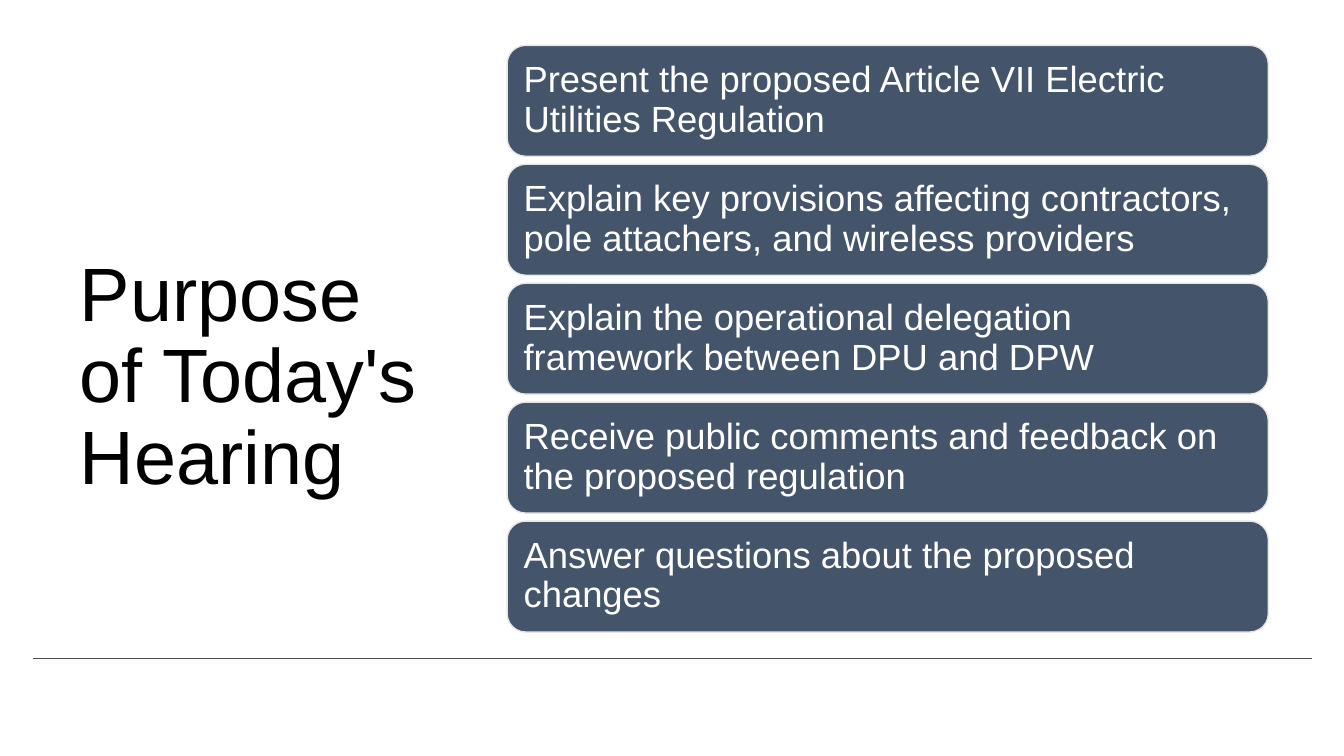
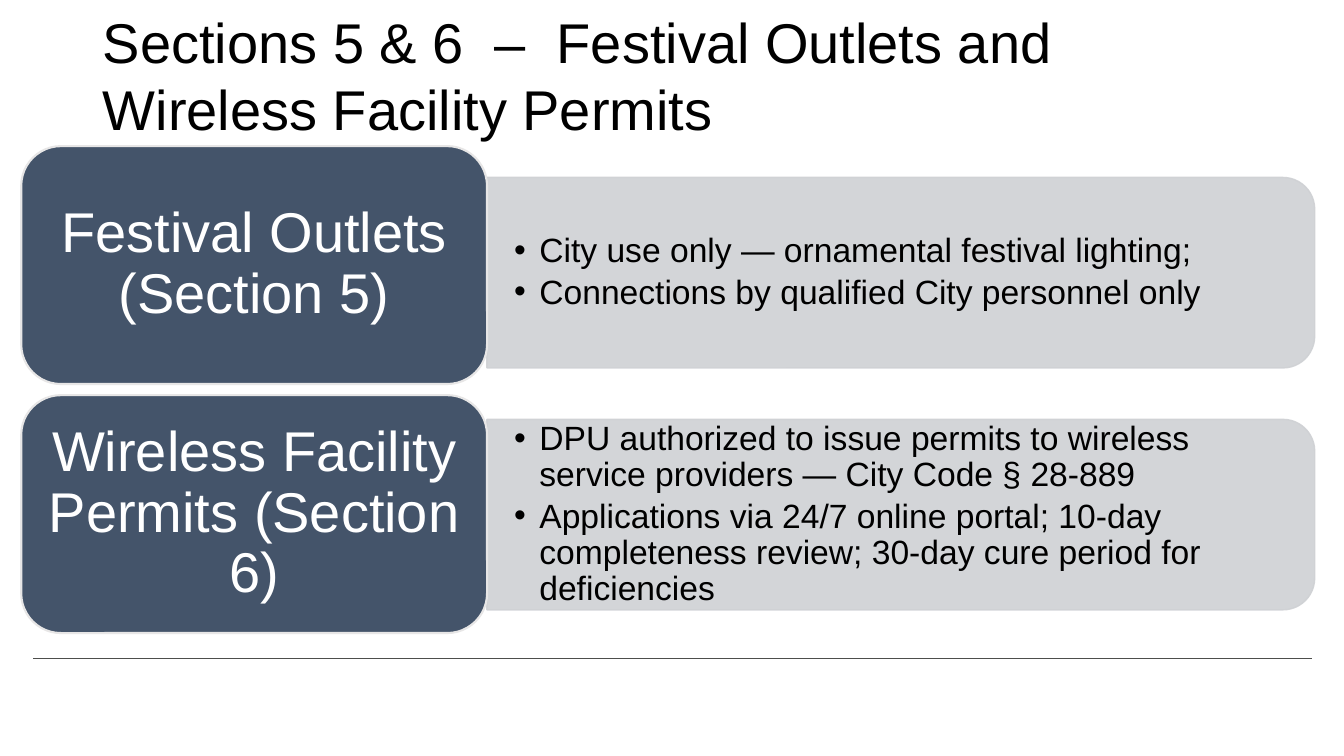
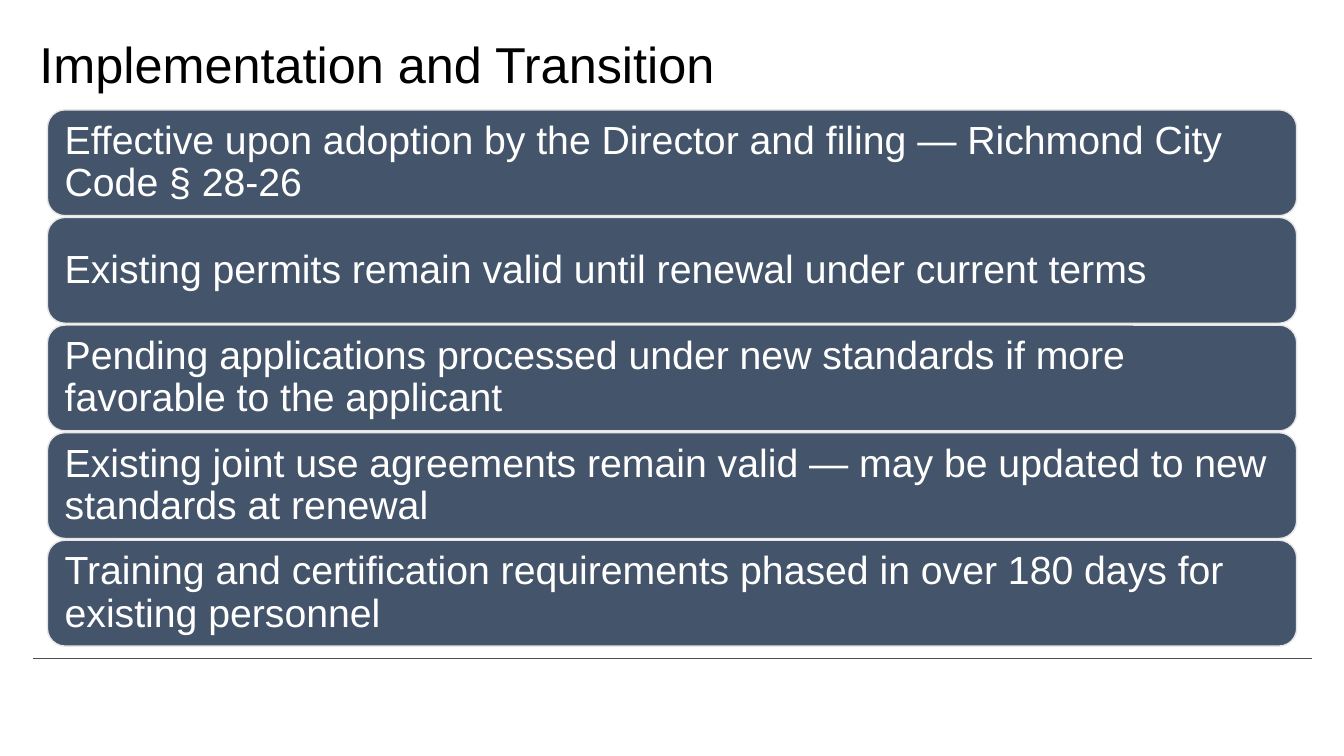
from dataclasses import dataclass

from lxml.etree import SubElement
from pptx import Presentation
from pptx.dml.color import RGBColor
from pptx.enum.shapes import MSO_CONNECTOR, MSO_SHAPE
from pptx.enum.text import MSO_ANCHOR, MSO_AUTO_SIZE, PP_ALIGN
from pptx.oxml.ns import qn
from pptx.util import Inches, Pt

SLIDE_WIDTH, SLIDE_HEIGHT = Inches(13.33), Inches(7.5)
TITLE_ONLY, TWO_CONTENT = 5, 3


@dataclass(frozen=True)
class Theme:
    font: str = "Arial"
    ink: str = "000000"
    white: str = "FFFFFF"
    navy: str = "44546A"
    edge: str = "E7E6E6"
    panel: str = "CFD1D4"
    rule: str = "4D4E4C"
    panel_opacity: int = 90
    list_size: int = 24
    topic_size: int = 40
    tight: float = 0.9


THEME = Theme()


@dataclass(frozen=True)
class Frame:
    """A rectangle in percent of the slide's width and height."""
    x: float
    y: float
    width: float
    height: float

    def emu(self) -> tuple[int, int, int, int]:
        return (across(self.x), down(self.y), across(self.width), down(self.height))


@dataclass(frozen=True)
class Heading:
    text: str
    frame: Frame
    size: int
    anchor: MSO_ANCHOR = MSO_ANCHOR.MIDDLE
    spacing: float = THEME.tight


@dataclass(frozen=True)
class BarSlide:
    heading: Heading
    stack: Frame
    bar_height: float
    size: int
    inset: float
    statements: tuple[str, ...]


@dataclass(frozen=True)
class Topic:
    label: str
    label_y: float
    panel_y: float
    points: tuple[str, ...]


PURPOSE = BarSlide(
    Heading("Purpose of Today's Hearing", Frame(5.18, 9.33, 28.06, 81.47), 54),
    Frame(37.73, 6, 56.64, 77.6), 14.67, 26, 0.11,
    ("Present the proposed Article VII Electric Utilities Regulation",
     "Explain key provisions affecting contractors, pole attachers, and wireless providers",
     "Explain the operational delegation framework between DPU and DPW",
     "Receive public comments and feedback on the proposed regulation",
     "Answer questions about the proposed changes"),
)

PERMITS_HEADING = Heading(
    "Sections 5 & 6  –  Festival Outlets and Wireless Facility Permits",
    Frame(6.9, 0.27, 86.27, 19.33), 40, MSO_ANCHOR.TOP, 1.0)
PERMITS = (
    Topic("Festival Outlets (Section 5)", 19.33, 23.47,
          ("City use only — ornamental festival lighting;",
           "Connections by qualified City personnel only")),
    Topic("Wireless Facility Permits (Section 6)", 52.27, 55.47,
          ("DPU authorized to issue permits to wireless service providers — City Code § 28-889",
           "Applications via 24/7 online portal; 10-day completeness review; "
           "30-day cure period for deficiencies")),
)

TRANSITION = BarSlide(
    Heading("Implementation and Transition", Frame(2.18, 0, 73.89, 17.87), 36),
    Frame(3.53, 14.53, 92.95, 70.93), 14, 28, 0.12,
    ("Effective upon adoption by the Director and filing — Richmond City Code § 28-26",
     "Existing permits remain valid until renewal under current terms",
     "Pending applications processed under new standards if more favorable to the applicant",
     "Existing joint use agreements remain valid — may be updated to new standards at renewal",
     "Training and certification requirements phased in over 180 days for existing personnel"),
)


def across(percent: float) -> int:
    return round(SLIDE_WIDTH * percent / 100)


def down(percent: float) -> int:
    return round(SLIDE_HEIGHT * percent / 100)


def colour(code: str) -> RGBColor:
    return RGBColor.from_string(code)


def place(shape, frame: Frame) -> None:
    shape.left, shape.top, shape.width, shape.height = frame.emu()


def set_text_area(text_frame, anchor: MSO_ANCHOR, side: float, ends: float) -> None:
    text_frame.word_wrap = True
    text_frame.auto_size = MSO_AUTO_SIZE.NONE
    text_frame.vertical_anchor = anchor
    text_frame.margin_left = text_frame.margin_right = Inches(side)
    text_frame.margin_top = text_frame.margin_bottom = Inches(ends)


def write(paragraph, text: str, size: int, ink: str,
          align: PP_ALIGN = PP_ALIGN.LEFT, spacing: float = THEME.tight) -> None:
    paragraph.alignment = align
    paragraph.line_spacing = spacing
    run = paragraph.add_run()
    run.text = text
    run.font.name = THEME.font
    run.font.size = Pt(size)
    run.font.color.rgb = colour(ink)


def paint(shape, fill: str, line: str, line_width: float) -> None:
    shape.shadow.inherit = False
    shape.fill.solid()
    shape.fill.fore_color.rgb = colour(fill)
    shape.line.color.rgb = colour(line)
    shape.line.width = Pt(line_width)


def add_master_rule(deck, slide) -> None:
    """Draw the footer rule and hand it to the master."""
    y = down(87.07)
    rule = slide.shapes.add_connector(
        MSO_CONNECTOR.STRAIGHT, across(2.48), y, across(97.6), y)
    rule.line.color.rgb = colour(THEME.rule)
    rule.line.width = Pt(0.5)
    SubElement(rule.element.spPr, qn("a:effectLst"))
    rule.element.nvCxnSpPr.cNvPr.set("id", "90")
    deck.slide_master.element.cSld.spTree.append(rule.element)


def add_slide(deck, layout: int, heading: Heading):
    slide = deck.slides.add_slide(deck.slide_layouts[layout])
    title = slide.shapes.title
    place(title, heading.frame)
    set_text_area(title.text_frame, heading.anchor, 0.1, 0.05)
    write(title.text_frame.paragraphs[0], heading.text, heading.size, THEME.ink,
          spacing=heading.spacing)
    return slide


def add_label_box(slide, frame: Frame, text: str, size: int, line_width: float,
                  side: float, ends: float, align: PP_ALIGN = PP_ALIGN.LEFT) -> None:
    box = slide.shapes.add_shape(MSO_SHAPE.ROUNDED_RECTANGLE, *frame.emu())
    paint(box, THEME.navy, THEME.edge, line_width)
    set_text_area(box.text_frame, MSO_ANCHOR.MIDDLE, side, ends)
    write(box.text_frame.paragraphs[0], text, size, THEME.white, align)


def add_bar_slide(deck, content: BarSlide):
    slide = add_slide(deck, TITLE_ONLY, content.heading)
    stack = content.stack
    pitch = (stack.height - content.bar_height) / (len(content.statements) - 1)
    for row, statement in enumerate(content.statements):
        frame = Frame(stack.x, stack.y + row * pitch, stack.width, content.bar_height)
        add_label_box(slide, frame, statement, content.size, 1,
                      content.inset, content.inset)
    return slide


def add_panel(slide, frame: Frame) -> None:
    """Turn a shape with two round top corners so that they face right."""
    left, top, width, height = frame.emu()
    shift = (width - height) // 2
    panel = slide.shapes.add_shape(MSO_SHAPE.ROUND_2_SAME_RECTANGLE,
                                   left + shift, top - shift, height, width)
    panel.rotation = 90
    paint(panel, THEME.panel, THEME.panel, 1)
    for tint in panel.element.spPr.iter(qn("a:srgbClr")):
        SubElement(tint, qn("a:alpha"), val=str(THEME.panel_opacity * 1000))


def fill_list(body, frame: Frame, points: tuple[str, ...]) -> None:
    place(body, frame)
    set_text_area(body.text_frame, MSO_ANCHOR.MIDDLE, 0.27, 0.02)
    for number, point in enumerate(points):
        paragraph = (body.text_frame.add_paragraph() if number
                     else body.text_frame.paragraphs[0])
        properties = paragraph._p.get_or_add_pPr()
        properties.set("marL", str(Inches(0.25)))
        properties.set("indent", str(-Inches(0.25)))
        SubElement(properties, qn("a:buChar"), char="•")
        paragraph.space_before = Pt(0.15 * THEME.list_size if number else 0)
        write(paragraph, point, THEME.list_size, THEME.ink)
    # Bring the list in front of its panel
    body.element.getparent().append(body.element)


def add_permit_slide(deck) -> None:
    slide = add_slide(deck, TWO_CONTENT, PERMITS_HEADING)
    bodies = [holder for holder in slide.placeholders
              if holder.placeholder_format.idx > 0]
    for topic, body in zip(PERMITS, bodies):
        panel = Frame(36.23, topic.panel_y, 61.59, 25.2)
        add_panel(slide, panel)
        fill_list(body, panel, topic.points)
        add_label_box(slide, Frame(1.58, topic.label_y, 34.66, 31.47), topic.label,
                      THEME.topic_size, 1.5, 0.15, 0.08, PP_ALIGN.CENTER)


def main() -> None:
    deck = Presentation()
    deck.slide_width, deck.slide_height = SLIDE_WIDTH, SLIDE_HEIGHT
    purpose_slide = add_bar_slide(deck, PURPOSE)
    add_master_rule(deck, purpose_slide)
    add_permit_slide(deck)
    add_bar_slide(deck, TRANSITION)
    deck.save("out.pptx")


if __name__ == "__main__":
    main()
